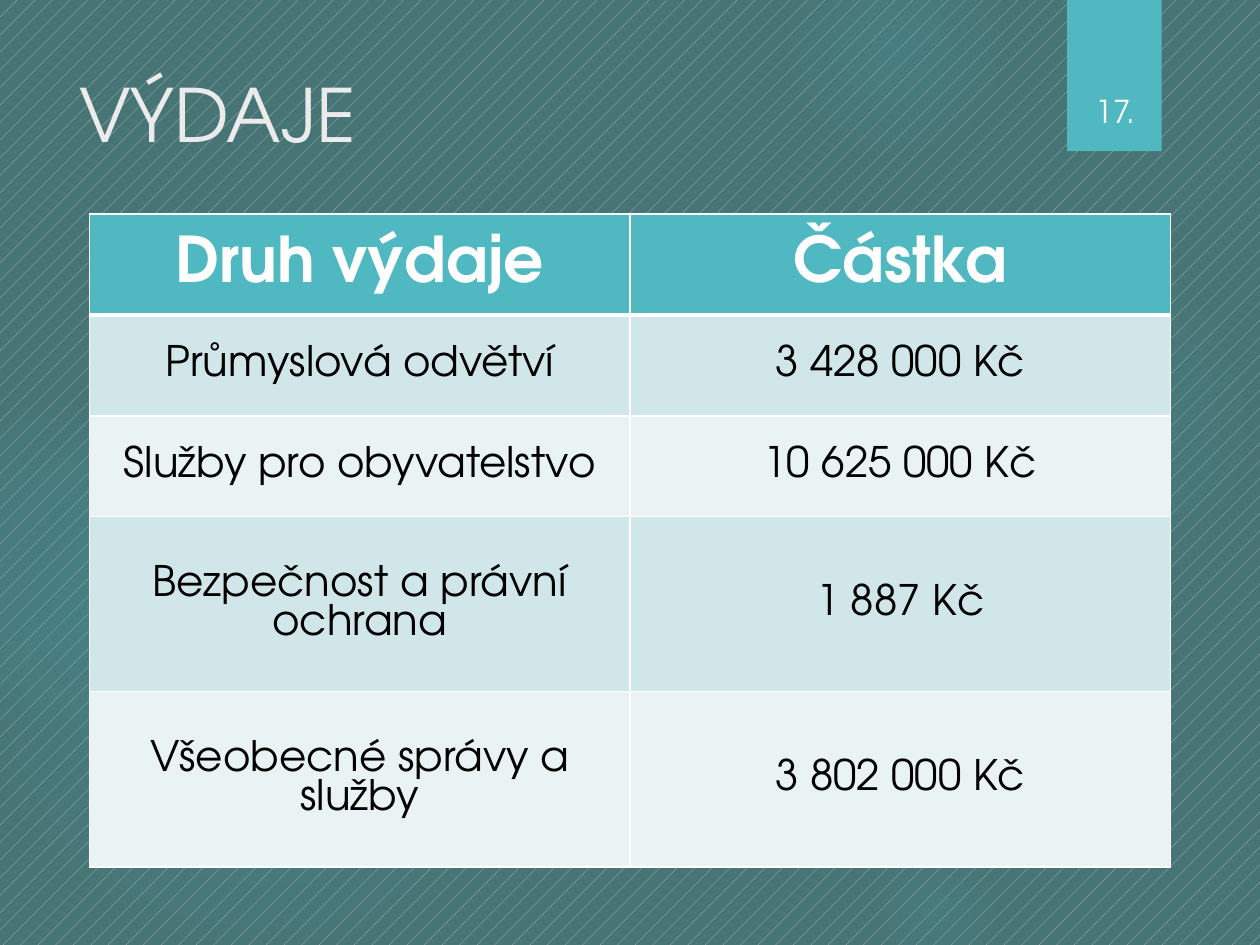
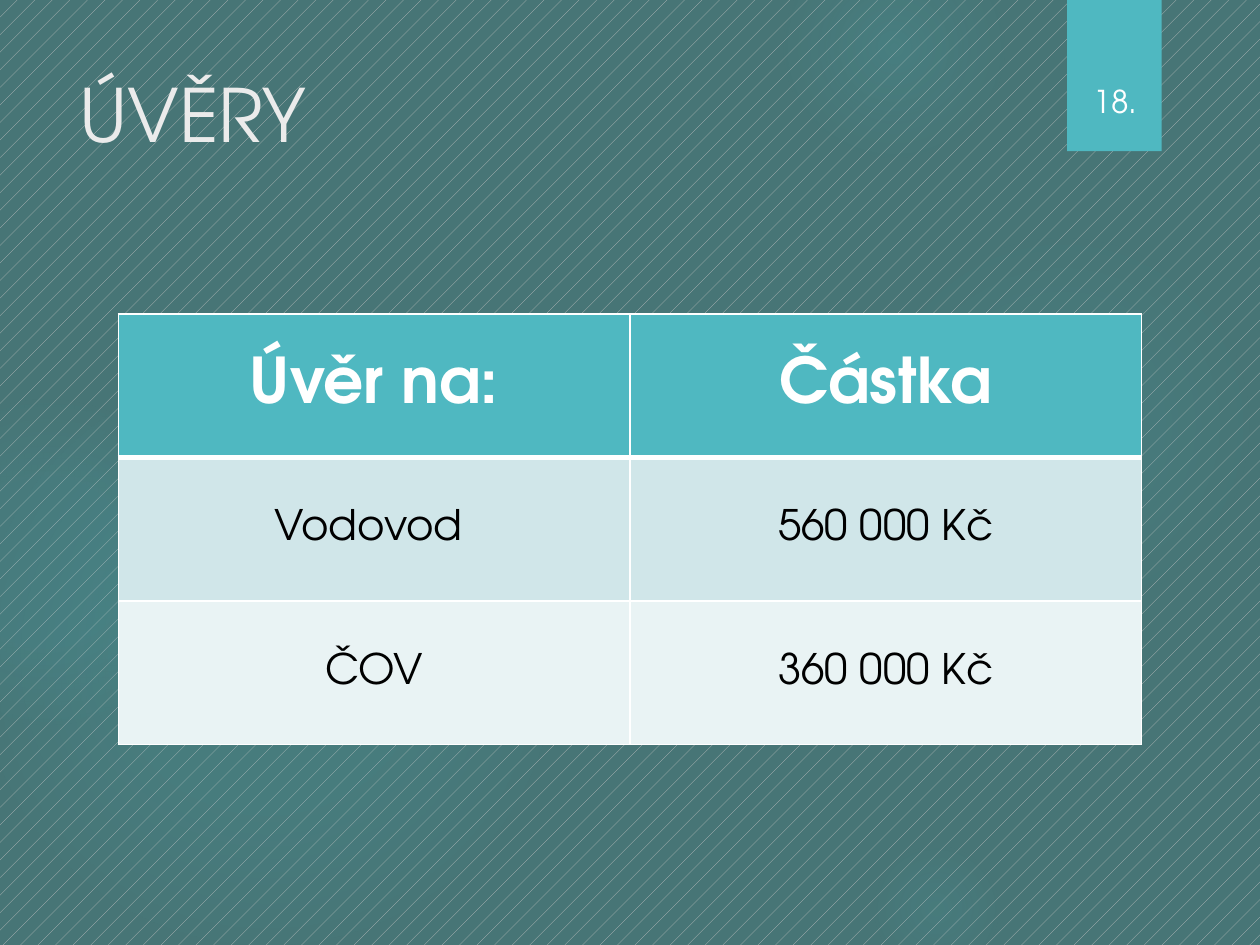
"""Build two budget slides, each with a title, a page tag and a table."""
from pptx import Presentation
from pptx.dml.color import RGBColor
from pptx.enum.dml import MSO_PATTERN
from pptx.enum.shapes import MSO_SHAPE
from pptx.enum.text import MSO_ANCHOR, MSO_AUTO_SIZE, PP_ALIGN
from pptx.oxml import parse_xml
from pptx.util import Inches, Pt

OVAL, RECT = MSO_SHAPE.OVAL, MSO_SHAPE.RECTANGLE
TOP, MIDDLE = MSO_ANCHOR.TOP, MSO_ANCHOR.MIDDLE
LEFT, CENTER = PP_ALIGN.LEFT, PP_ALIGN.CENTER
DOTS, FIXED = MSO_PATTERN.PERCENT_5, MSO_AUTO_SIZE.NONE

FONT = "TeX Gyre Adventor"
NS = 'xmlns:a="http://schemas.openxmlformats.org/drawingml/2006/main"'
GROUND = RGBColor(0x47, 0x75, 0x76)
GREY = RGBColor(0xBF, 0xBF, 0xBF)
TEAL = RGBColor(0x4F, 0xB8, 0xC1)
GLOW = RGBColor(0x50, 0xB9, 0xC1)
PALE = RGBColor(0xE9, 0xF3, 0xF4)
MIST = RGBColor(0xD0, 0xE6, 0xE9)
CLOUD = RGBColor(0xEB, 0xEB, 0xEB)
WHITE = RGBColor(0xFF, 0xFF, 0xFF)
BLACK = RGBColor(0, 0, 0)

GLOWS = [
    (6.89, 1.83, 3.08, [(0, 7), (36, 6), (69, 0)]),
    (6.22, -0.5, 1.75, [(0, 14), (36, 7), (73, 0)]),
    (6.89, 6.67, 1.08, [(0, 9), (36, 5), (66, 0)]),
    (-0.17, 2.92, 4.58, [(0, 11), (36, 10), (75, 0)]),
    (-0.92, 3.17, 2.58, [(0, 8), (36, 8), (72, 0)]),
]
PAGES = [
    ("VÝDAJE", "17.", 0.68, (0.71, 1.7, 8.58), [0.8, 0.8, 0.8, 1.39, 1.39], [
        ("Druh výdaje", "Částka"),
        ("Průmyslová odvětví", "3 428 000 Kč"),
        ("Služby pro obyvatelstvo", "10 625 000 Kč"),
        ("Bezpečnost a právní ochrana", "1 887 Kč"),
        ("Všeobecné správy a služby", "3 802 000 Kč"),
    ]),
    ("ÚVĚRY", "18.", 0.6, (0.94, 2.49, 8.12), [1.14] * 3, [
        ("Úvěr na:", "Částka"),
        ("Vodovod ", "560 000 Kč"),
        ("ČOV", "360 000 Kč"),
    ]),
]


def write(frame, text, size, color, align=CENTER, bold=False):
    para = frame.paragraphs[0]
    para.alignment = align
    run = para.add_run()
    run.text = text
    run.font.name = FONT
    run.font.size = Pt(size)
    run.font.bold = bold
    run.font.color.rgb = color


def edge(cell, top, bottom):
    sides = [("L", 1), ("R", 1), ("T", top), ("B", bottom)]
    props = cell._tc.get_or_add_tcPr()
    for spot, (side, width) in enumerate(sides):
        props.insert(spot, parse_xml(
            f'<a:ln{side} {NS} w="{Pt(width)}"><a:solidFill>'
            f'<a:srgbClr val="{WHITE}"/></a:solidFill></a:ln{side}>'))


prs = Presentation()
prs.slide_width, prs.slide_height = Inches(10), Inches(7.5)
ground = prs.slide_master.background.fill
ground.patterned()
ground.pattern = DOTS
ground.fore_color.rgb = GREY
ground.back_color.rgb = GROUND

layout = prs.slide_layouts[5]
slides = [prs.slides.add_slide(layout) for page in PAGES]

decor = []
for left, top, size, stops in GLOWS:
    glow = slides[0].shapes.add_shape(
        OVAL, Inches(left), Inches(top), Inches(size), Inches(size))
    marks = "".join(
        f'<a:gs pos="{pos * 1000}"><a:srgbClr val="{GLOW}">'
        f'<a:alpha val="{alpha * 1000}"/></a:srgbClr></a:gs>'
        for pos, alpha in stops)
    glow._element.spPr.insert(2, parse_xml(
        f'<a:gradFill {NS}><a:gsLst>{marks}</a:gsLst><a:path path="circle">'
        '<a:fillToRect l="50000" t="50000" r="50000" b="50000"/>'
        '</a:path></a:gradFill>'))
    decor.append(glow)
band = slides[0].shapes.add_shape(
    RECT, Inches(8.47), 0, Inches(0.75), Inches(1.2))
band.fill.solid()
band.fill.fore_color.rgb = TEAL
decor.append(band)

for num, shape in enumerate(decor, 20):
    shape.line.fill.background()
    shape.shadow.inherit = False
    shape._element.nvSpPr.cNvPr.id = num
    layout.shapes._spTree.append(shape._element)

for slide, (name, page, drop, place, highs, rows) in zip(slides, PAGES):
    title = slide.shapes.title
    title.left, title.top = Inches(0.53), Inches(0.5)
    title.width, title.height = Inches(7.72), Inches(1.53)
    title.text_frame.auto_size = FIXED
    title.text_frame.vertical_anchor = TOP
    write(title.text_frame, name, 42, CLOUD, LEFT)

    tag = slide.shapes.add_textbox(
        Inches(8.54), Inches(drop), Inches(0.63), Inches(0.4))
    tag.text_frame.word_wrap = True
    write(tag.text_frame, page, 18, WHITE)

    left, top, width = place
    table = slide.shapes.add_table(
        len(rows), 2, Inches(left), Inches(top),
        Inches(width), Inches(sum(highs))).table
    for r, (high, row) in enumerate(zip(highs, rows)):
        table.rows[r].height = Inches(high)
        head = r == 0
        fill = TEAL if head else MIST if r % 2 else PALE
        for c, text in enumerate(row):
            cell = table.cell(r, c)
            cell.vertical_anchor = MIDDLE
            cell.fill.solid()
            cell.fill.fore_color.rgb = fill
            edge(cell, 3 if r == 1 else 1, 3 if head else 1)
            write(cell.text_frame, text, 36 if head else 24,
                  WHITE if head else BLACK, bold=head)

prs.save("out.pptx")
